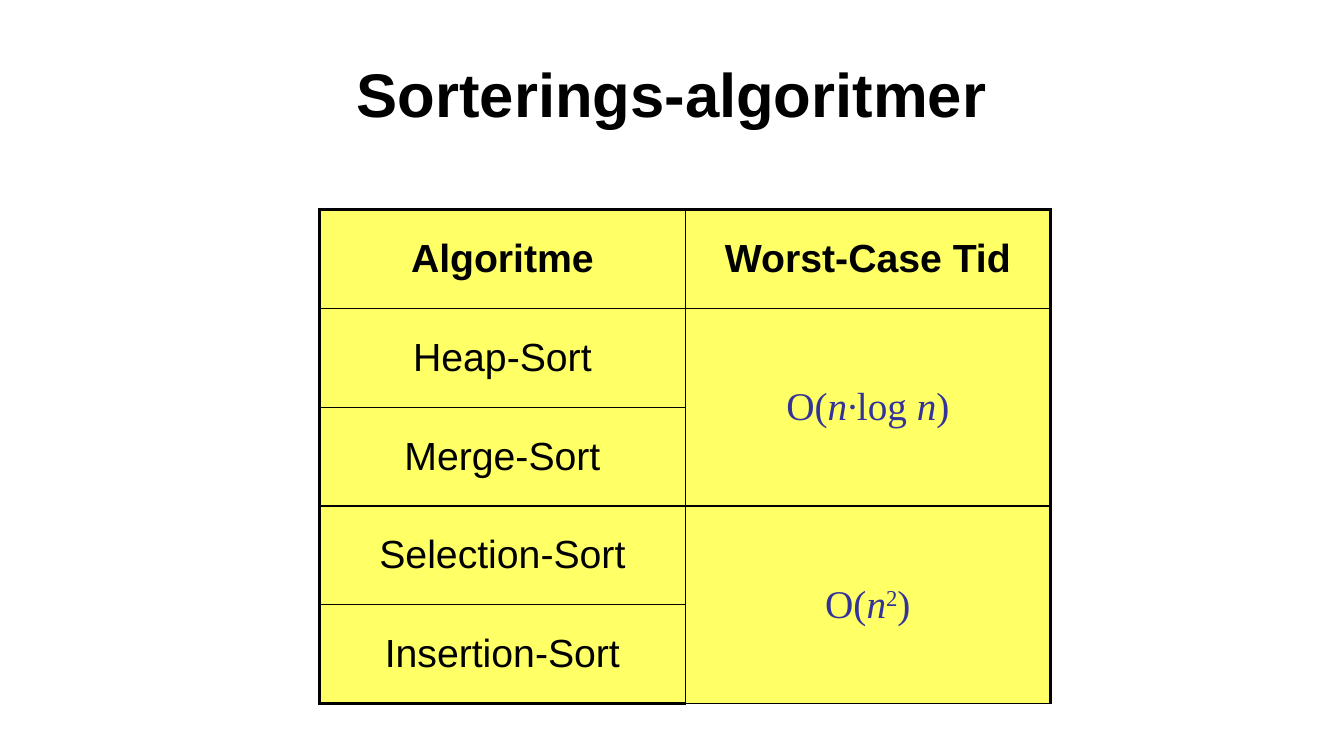
from lxml import etree
from pptx import Presentation
from pptx import util as u
from pptx.dml.color import RGBColor
from pptx.enum import text
from pptx.oxml.ns import qn

COLOURS = {"ink": "000000", "formula": "333399", "cell": "FFFF66"}
SLIDE_W, SLIDE_H = u.Inches(13.33), u.Inches(7.5)
COL_W, ROW_H = u.Inches(3.625), u.Inches(0.98)
OUTER, INNER = u.Pt(2.25), u.Pt(1)

PLAIN, ITALIC, SUPER = "plain", "italic", "super"
ALGORITHMS = ["Heap-Sort", "Merge-Sort", "Selection-Sort", "Insertion-Sort"]
# Each worst-case time covers two algorithms
TIMES = [
    [("O(", PLAIN), ("n·", ITALIC), ("log ", PLAIN), ("n", ITALIC), (")", PLAIN)],
    [("O(", PLAIN), ("n", ITALIC), ("2", SUPER), (")", PLAIN)],
]


def add_run(paragraph, words, size, font="Arial", colour="ink", bold=False, style=PLAIN):
    run = paragraph.add_run()
    run.text = words
    run.font.name = font
    run.font.size = u.Pt(size)
    run.font.bold = bold
    run.font.italic = style == ITALIC
    run.font.color.rgb = RGBColor.from_string(COLOURS[colour])
    if style == SUPER:
        run._r.get_or_add_rPr().set("baseline", "30000")


def centred_paragraph(holder):
    holder.vertical_anchor = text.MSO_ANCHOR.MIDDLE
    frame = getattr(holder, "text_frame", holder)
    paragraph = frame.paragraphs[0]
    paragraph.alignment = text.PP_ALIGN.CENTER
    return paragraph


def add_title(slide, words):
    title = slide.shapes.title
    title.left, title.top = int(SLIDE_W * 0.05), int(SLIDE_H * 0.04)
    title.width, title.height = int(SLIDE_W * 0.9), u.Inches(1.25)
    add_run(centred_paragraph(title.text_frame), words, 44, bold=True)


def set_borders(cell, widths):
    properties = cell._tc.get_or_add_tcPr()
    for position, (side, width) in enumerate(widths.items()):
        line = etree.Element(qn(f"a:ln{side}"), w=str(width))
        fill = etree.SubElement(line, qn("a:solidFill"))
        etree.SubElement(fill, qn("a:srgbClr"), val=COLOURS["ink"])
        properties.insert(position, line)


def add_grid(slide, rows, columns):
    grid = slide.shapes.add_table(rows, columns, u.Inches(3.17), u.Inches(2.08),
                                  COL_W * columns, ROW_H * rows).table
    grid.first_row = grid.horz_banding = False
    for r in range(rows):
        grid.rows[r].height = ROW_H
        for c in range(columns):
            cell = grid.cell(r, c)
            cell.fill.solid()
            cell.fill.fore_color.rgb = RGBColor.from_string(COLOURS["cell"])
            set_borders(cell, {
                "L": OUTER if c == 0 else INNER,
                "R": OUTER if c == columns - 1 else INNER,
                "T": OUTER if r == 0 else INNER,
                "B": OUTER if r == rows - 1 else INNER,
            })
    return grid


def main():
    deck = Presentation()
    deck.slide_width, deck.slide_height = SLIDE_W, SLIDE_H
    slide = deck.slides.add_slide(deck.slide_layouts[5])
    add_title(slide, "Sorterings-algoritmer")

    # Header row
    grid = add_grid(slide, len(ALGORITHMS) + 1, 2)
    for c, heading in enumerate(["Algoritme", "Worst-Case Tid"]):
        add_run(centred_paragraph(grid.cell(0, c)), heading, 28, bold=True)

    # Algorithms
    for r, algorithm in enumerate(ALGORITHMS, start=1):
        add_run(centred_paragraph(grid.cell(r, 0)), algorithm, 28)

    # Running times, merged over pairs of rows
    for pair, formula in enumerate(TIMES):
        first = 1 + 2 * pair
        cell = grid.cell(first, 1)
        cell.merge(grid.cell(first + 1, 1))
        paragraph = centred_paragraph(cell)
        for words, style in formula:
            add_run(paragraph, words, 28, "Times New Roman", "formula", style=style)

    deck.save("out.pptx")


if __name__ == "__main__":
    main()
